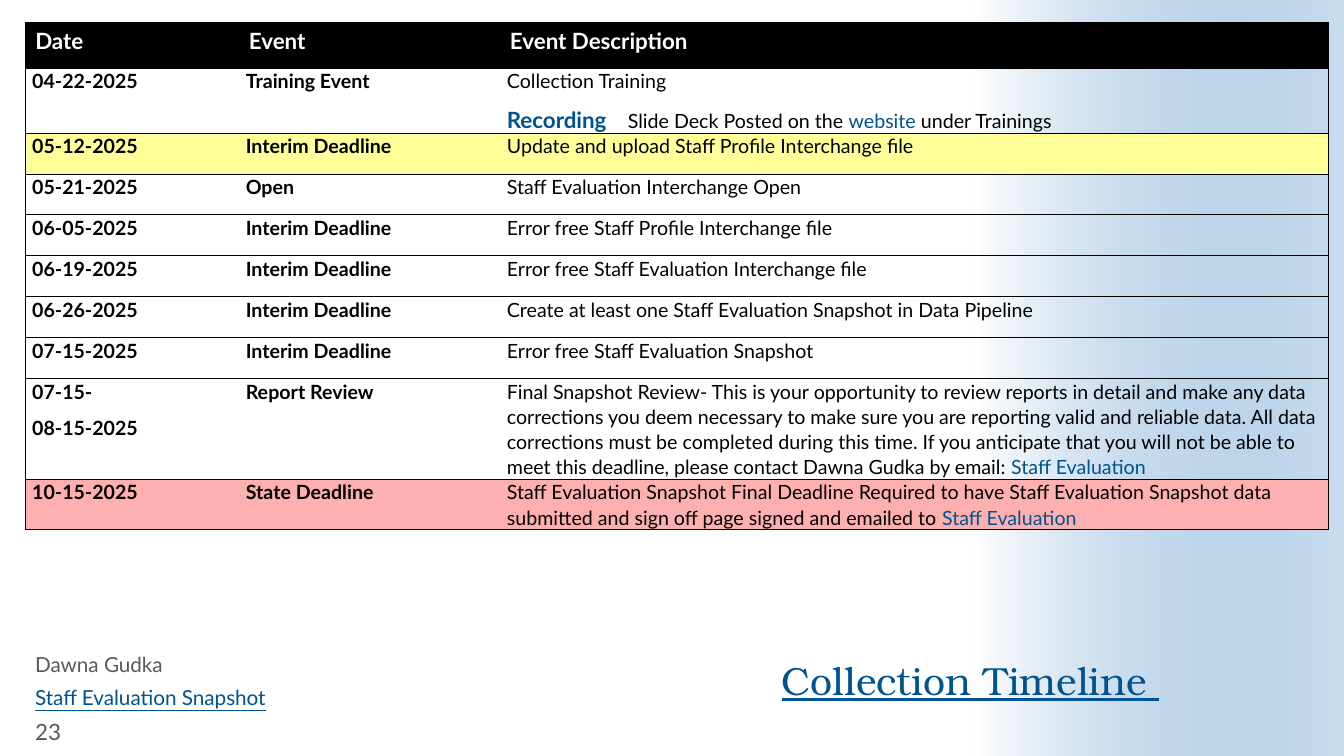
import pptx
import pptx.util
import pptx.dml.color
import pptx.enum.shapes
import pptx.enum.text
import pptx.oxml
import pptx.oxml.ns

Pt = pptx.util.Pt
Anchor = pptx.enum.text.MSO_ANCHOR
Align = pptx.enum.text.PP_ALIGN

COLORS = {
    "black": "000000", "white": "FFFFFF", "link": "005390", "gray": "595959",
    "sky": "488BC9", "yellow": "FFFF99", "pink": "FEB0B0",
}
HEAD = ["Date", "Event", "Event Description"]
LINK = {"color": "link"}

# Each row: dates, event, description paragraphs made of runs, fill
ROWS = [
    (["04-22-2025"], "Training Event", [
        ["Collection Training"],
        [("Recording", {"color": "link", "bold": True, "size": 16}),
         "\tSlide Deck Posted on the ", ("website", LINK), " under Trainings"],
    ], None),
    (["05-12-2025"], "Interim Deadline",
     [["Update and upload Staff Profile Interchange file"]], "yellow"),
    (["05-21-2025"], "Open", [["Staff Evaluation Interchange Open"]], None),
    (["06-05-2025"], "Interim Deadline",
     [["Error free Staff Profile Interchange file"]], None),
    (["06-19-2025"], "Interim Deadline",
     [["Error free Staff Evaluation Interchange file"]], None),
    (["06-26-2025"], "Interim Deadline",
     [["Create at least one Staff Evaluation Snapshot in Data Pipeline"]], None),
    (["07-15-2025"], "Interim Deadline",
     [["Error free Staff Evaluation Snapshot"]], None),
    (["07-15-", "08-15-2025"], "Report Review", [[
        "Final Snapshot Review- This is your opportunity to review reports in "
        "detail and make any data corrections you deem necessary to make sure "
        "you are reporting valid and reliable data. All data corrections must "
        "be completed during this time. If you anticipate that you will not be "
        "able to meet this deadline, please contact Dawna Gudka by email: ",
        ("Staff Evaluation", LINK)]], None),
    (["10-15-2025"], "State Deadline", [[
        "Staff Evaluation Snapshot Final Deadline Required to have Staff "
        "Evaluation Snapshot data submitted and sign off page signed and "
        "emailed to ", ("Staff Evaluation", LINK)]], "pink"),
]
WIDTHS = [152.6, 186.5, 591.8]
HEAD_H, ROW_H = 32.5, 29.2
TAB_AT = 86.4

# Each footer: text, top, width, format
FOOT = [
    ("Dawna Gudka", 465.8, 280, {"size": 14.8, "space": 0.8}),
    ("Staff Evaluation Snapshot", 488.9, 280,
     {"size": 14.8, "space": 0.8, "color": "link", "line": True}),
    ("23", 511.2, 61.2, {"size": 16, "anchor": Anchor.MIDDLE}),
]


def rgb(name):
    return pptx.dml.color.RGBColor.from_string(COLORS[name])


def write(frame, paras, size=14, color="black", bold=False, line=False,
          font="Lato", space=None, after=None, align=None, anchor=Anchor.TOP):
    """Fill a frame; a run is a string or a (string, changed format) pair."""
    frame.word_wrap = True
    frame.vertical_anchor = anchor
    for i, runs in enumerate(paras):
        para = frame.paragraphs[0] if i == 0 else frame.add_paragraph()
        para.alignment = align
        para.line_spacing = space
        if after is not None:
            para.space_after = Pt(after)
        for item in runs:
            text, diff = (item, {}) if isinstance(item, str) else item
            if text.startswith("\t"):
                add_tab(para)
            run = para.add_run()
            run.text = text
            face = run.font
            face.name = font
            face.size = Pt(diff.get("size", size))
            face.bold = diff.get("bold", bold)
            face.underline = line
            face.color.rgb = rgb(diff.get("color", color))


def add_tab(para):
    props = para._p.get_or_add_pPr()
    tabs = pptx.oxml.parse_xml(
        f'<a:tabLst {pptx.oxml.ns.nsdecls("a")}>'
        f'<a:tab pos="{Pt(TAB_AT)}" algn="l"/></a:tabLst>')
    props.append(tabs)


def edge(cell, col):
    """Rule the cell above and below, and only on the table's outer sides."""
    shown = {"L": col == 0, "R": col == len(HEAD) - 1, "T": True, "B": True}
    props = cell._tc.get_or_add_tcPr()
    for i, (side, on) in enumerate(shown.items()):
        paint = (f'<a:solidFill><a:srgbClr val="{COLORS["black"]}"/></a:solidFill>'
                 if on else "<a:noFill/>")
        props.insert(i, pptx.oxml.parse_xml(
            f'<a:ln{side} {pptx.oxml.ns.nsdecls("a")} w="{Pt(0.5)}">'
            f'{paint}</a:ln{side}>'))


def set_cell(cell, col, paras, fill, **form):
    if fill:
        cell.fill.solid()
        cell.fill.fore_color.rgb = rgb(fill)
    else:
        cell.fill.background()
    edge(cell, col)
    write(cell.text_frame, paras, **form)


def add_band(slide):
    band = slide.shapes.add_shape(
        pptx.enum.shapes.MSO_SHAPE.RECTANGLE, Pt(696.2), 0, Pt(263.8), Pt(540))
    band.shadow.inherit = False
    band.line.fill.background()
    band.fill.gradient()
    band.fill.gradient_angle = 0
    for stop, name in zip(band.fill.gradient_stops, ["white", "sky"]):
        stop.color.rgb = rgb(name)
    last = band._element.xpath(".//a:gs/a:srgbClr")[-1]
    last.append(pptx.oxml.parse_xml(
        f'<a:alpha {pptx.oxml.ns.nsdecls("a")} val="30000"/>'))


def add_dates(slide):
    high = HEAD_H + ROW_H * len(ROWS)
    table = slide.shapes.add_table(
        len(ROWS) + 1, len(HEAD), Pt(18), Pt(16), Pt(sum(WIDTHS)), Pt(high)).table
    table.first_row = table.horz_banding = False
    for col, width in enumerate(WIDTHS):
        table.columns[col].width = Pt(width)
        set_cell(table.cell(0, col), col, [[HEAD[col]]], "black",
                 size=16, color="white", bold=True)
    for i in range(len(ROWS) + 1):
        table.rows[i].height = Pt(ROW_H if i else HEAD_H)
    for i, (dates, event, about, fill) in enumerate(ROWS, 1):
        parts = [[[date] for date in dates], [[event]], about]
        for col, paras in enumerate(parts):
            cell = table.cell(i, col)
            cell.margin_left = cell.margin_right = Pt(5)
            cell.margin_top = cell.margin_bottom = 0
            set_cell(cell, col, paras, fill, bold=col < 2, space=1.07, after=8)


def add_title(slide):
    box = slide.shapes.add_textbox(Pt(306.7), Pt(464.4), Pt(521.3), Pt(70.6))
    frame = box.text_frame
    frame.margin_left = frame.margin_right = frame.margin_top = 0
    frame.margin_bottom = Pt(33.5)
    write(frame, [["Collection Timeline "]], size=28, color="link", line=True,
          font="TeX Gyre Bonum", space=0.9, align=Align.RIGHT,
          anchor=Anchor.BOTTOM)


def main():
    deck = pptx.Presentation()
    deck.slide_width, deck.slide_height = Pt(960), Pt(540)
    slide = deck.slides.add_slide(deck.slide_layouts[6])
    add_band(slide)
    add_title(slide)
    add_dates(slide)
    for text, top, width, form in FOOT:
        box = slide.shapes.add_textbox(Pt(18), Pt(top), Pt(width), Pt(22.3))
        write(box.text_frame, [[text]], **{"color": "gray", **form})
    deck.save("out.pptx")


if __name__ == "__main__":
    main()
